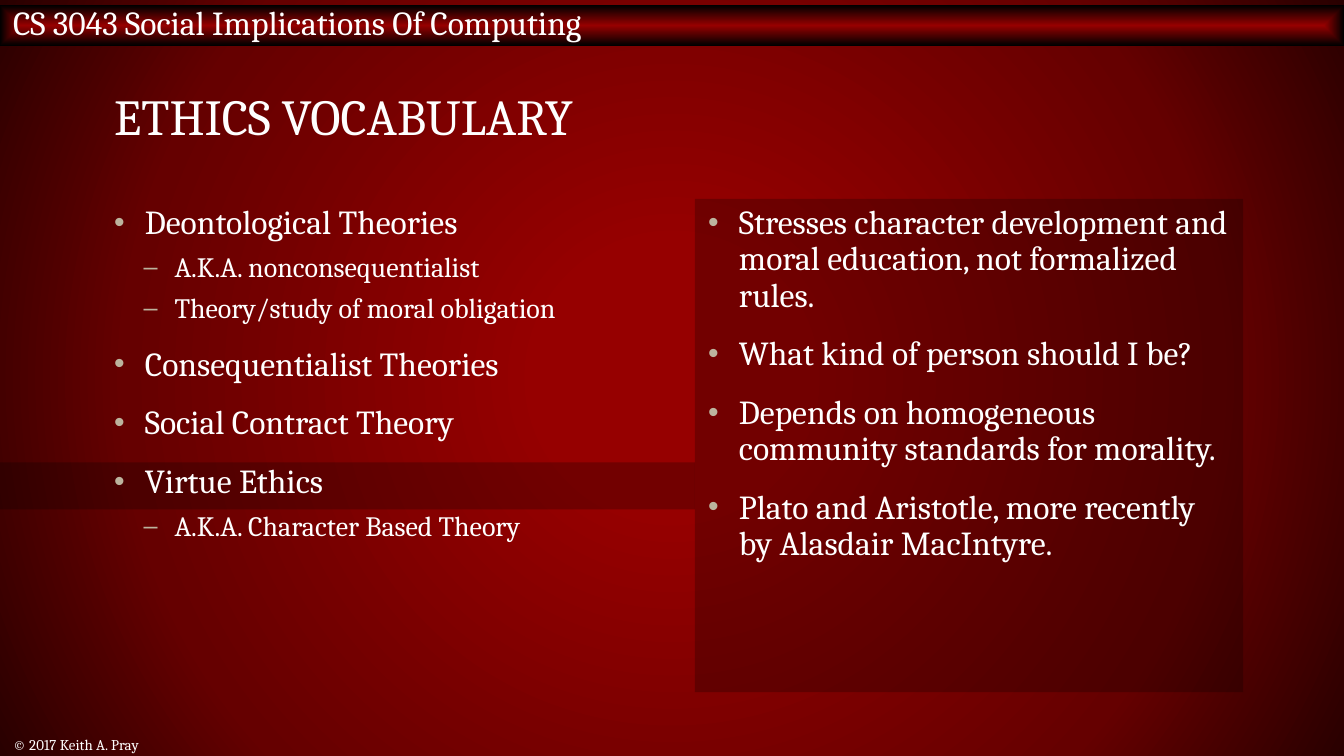
from dataclasses import dataclass

from pptx import Presentation
from pptx.dml.color import RGBColor
from pptx.enum.shapes import MSO_SHAPE as Shape
from pptx.enum.text import MSO_ANCHOR as Anchor, MSO_AUTO_SIZE as AutoSize, PP_ALIGN as Align
from pptx.oxml.ns import qn
from pptx.util import Inches, Pt
from lxml.etree import SubElement


@dataclass(frozen=True)
class Theme:
    font: str = "Cambria"
    text: str = "FFFFFF"
    bullet: str = "BCB49E"
    shade: str = "000000"
    shade_alpha: int = 24
    backdrop: tuple = ((17, "960000"), (71, "650000"), (100, "290000"))
    banner: tuple = ((0, "960000"), (100, "000000"))
    title_size: int = 27
    body_size: int = 18
    sub_size: int = 15
    footer_size: int = 8


THEME = Theme()

# Bullet style for each outline level
LEVELS = (
    {"char": "•", "indent": 0.23, "before": 12, "size": THEME.body_size},
    {"char": "–", "indent": 0.45, "before": 6, "size": THEME.sub_size},
)
HANGING = 0.23

VOCABULARY = (
    (0, "Deontological Theories"),
    (1, "A.K.A. nonconsequentialist"),
    (1, "Theory/study of moral obligation"),
    (0, "Consequentialist Theories"),
    (0, "Social Contract Theory"),
    (0, "Virtue Ethics"),
    (1, "A.K.A. Character Based Theory"),
)
VIRTUE_ETHICS = (
    (0, "Stresses character development and moral education, not formalized rules."),
    (0, "What kind of person should I be?"),
    (0, "Depends on homogeneous community standards for morality."),
    (0, "Plato and Aristotle, more recently by Alasdair MacIntyre."),
)


def inches(box):
    return [Inches(length) for length in box]


def centre_gradient(fill, owner, stops, shape):
    """Fill from the centre outwards; shape is 'circle' or 'shape'."""
    fill.gradient()
    gradient = owner.find(".//" + qn("a:gradFill"))
    gradient.clear()
    gradient.set("rotWithShape", "1")
    stop_list = SubElement(gradient, qn("a:gsLst"))
    for position, colour in stops:
        stop = SubElement(stop_list, qn("a:gs"), pos=str(position * 1000))
        SubElement(stop, qn("a:srgbClr"), val=colour)
    direction = SubElement(gradient, qn("a:path"), path=shape)
    SubElement(direction, qn("a:fillToRect"), l="50000", t="50000", r="50000", b="50000")


def add_rectangle(slide, box):
    rectangle = slide.shapes.add_shape(Shape.RECTANGLE, *inches(box))
    rectangle.shadow.inherit = False
    rectangle.line.fill.background()
    return rectangle


def format_frame(frame, anchor, top=0.05):
    settings = {
        "word_wrap": True,
        "auto_size": AutoSize.NONE,
        "vertical_anchor": anchor,
        "margin_left": Inches(0.1),
        "margin_right": Inches(0.1),
        "margin_top": Inches(top),
        "margin_bottom": Inches(0.05),
    }
    for name, value in settings.items():
        setattr(frame, name, value)


def write(paragraph, text, size):
    paragraph.alignment = Align.LEFT
    run = paragraph.add_run()
    run.text = text
    run.font.name = THEME.font
    run.font.size = Pt(size)
    run.font.color.rgb = RGBColor.from_string(THEME.text)


def add_bullet(paragraph, level):
    properties = paragraph._p.get_or_add_pPr()
    properties.set("marL", str(Inches(level["indent"])))
    properties.set("indent", str(-Inches(HANGING)))
    colour = SubElement(properties, qn("a:buClr"))
    SubElement(colour, qn("a:srgbClr"), val=THEME.bullet)
    SubElement(properties, qn("a:buSzPct"), val="90000")
    SubElement(properties, qn("a:buFont"), typeface="Arial")
    SubElement(properties, qn("a:buChar"), char=level["char"])


def course_banner(slide, box):
    banner = add_rectangle(slide, box)
    centre_gradient(banner.fill, banner.element, THEME.banner, "shape")
    format_frame(banner.text_frame, Anchor.MIDDLE, top=0)
    write(banner.text_frame.paragraphs[0], "CS 3043 Social Implications Of Computing", THEME.body_size)


def shaded_band(slide, box):
    band = add_rectangle(slide, box)
    band.fill.solid()
    band.fill.fore_color.rgb = RGBColor.from_string(THEME.shade)
    colour = band.element.find(".//" + qn("a:srgbClr"))
    SubElement(colour, qn("a:alpha"), val=str(THEME.shade_alpha * 1000))


def heading(slide, box):
    title = slide.shapes.title
    title.left, title.top, title.width, title.height = inches(box)
    format_frame(title.text_frame, Anchor.MIDDLE)
    paragraph = title.text_frame.paragraphs[0]
    paragraph.line_spacing = 0.8
    write(paragraph, "ETHICS VOCABULARY", THEME.title_size)


def outline(slide, box, items):
    frame = slide.shapes.add_textbox(*inches(box)).text_frame
    format_frame(frame, Anchor.TOP)
    for index, (depth, text) in enumerate(items):
        level = LEVELS[depth]
        paragraph = frame.add_paragraph() if index else frame.paragraphs[0]
        paragraph.level = depth
        paragraph.line_spacing = 0.9
        paragraph.space_before = Pt(level["before"] if index else 0)
        add_bullet(paragraph, level)
        write(paragraph, text, level["size"])


def copyright_line(slide, box):
    frame = slide.shapes.add_textbox(*inches(box)).text_frame
    format_frame(frame, Anchor.MIDDLE)
    write(frame.paragraphs[0], "© 2017 Keith A. Pray", THEME.footer_size)


def main():
    deck = Presentation()
    # Widescreen, 16:9
    deck.slide_width = Inches(10)
    deck.slide_height = deck.slide_width * 9 // 16
    slide = deck.slides.add_slide(deck.slide_layouts[5])
    centre_gradient(slide.background.fill, slide.element, THEME.backdrop, "circle")

    left_column = (0.75, 1.48, 4.08, 3.67)
    right_column = (5.17, 1.48, 4.08, 3.67)

    course_banner(slide, (0, 0.04, 10, 0.3))
    # The band behind "Virtue Ethics" runs into the panel that explains it
    shaded_band(slide, (0, 3.44, right_column[0], 0.35))
    shaded_band(slide, right_column)
    heading(slide, (0.75, 0.4, 8.5, 1))
    outline(slide, right_column, VIRTUE_ETHICS)
    copyright_line(slide, (0, 5.46, 6.08, 0.16))
    outline(slide, left_column, VOCABULARY)
    deck.save("out.pptx")


if __name__ == "__main__":
    main()
